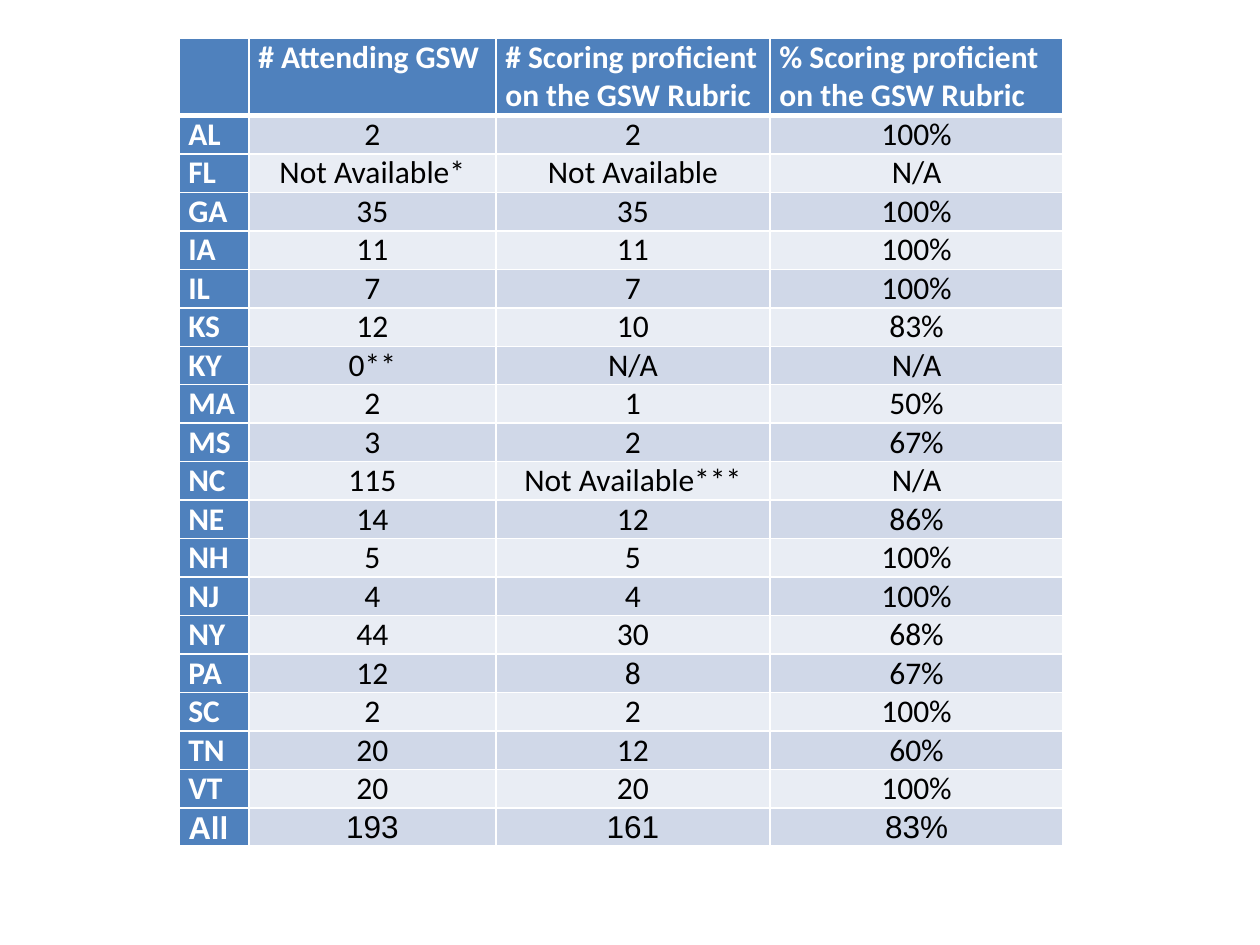
from dataclasses import dataclass

from lxml.etree import SubElement
from pptx import Presentation
from pptx.dml.color import RGBColor
from pptx.enum.text import MSO_ANCHOR, PP_ALIGN
from pptx.oxml.ns import qn
from pptx.table import _Cell
from pptx.util import Pt

COLORS = {
    "accent": "4F81BD",
    "band_dark": "D0D8E8",
    "band_light": "E9EDF4",
    "white": "FFFFFF",
    "black": "000000",
}
COLUMN_WIDTHS = (40, 141.2, 156.6, 167.6)
ROW_HEIGHT = 21.6
HEADINGS = (
    "",
    "# Attending GSW",
    "# Scoring proficient on the GSW Rubric",
    "% Scoring proficient on the GSW Rubric",
)


@dataclass(frozen=True)
class StateResult:
    state: str
    attending: str
    proficient: str
    percent: str
    font: str = "Calibri"


@dataclass(frozen=True)
class CellStyle:
    fill: str
    color: str
    bold: bool
    anchor: MSO_ANCHOR
    align: PP_ALIGN


HEADING = CellStyle("accent", "white", True, MSO_ANCHOR.TOP, PP_ALIGN.LEFT)
STATE = CellStyle("accent", "white", True, MSO_ANCHOR.BOTTOM, PP_ALIGN.LEFT)
BANDS = tuple(
    CellStyle(fill, "black", False, MSO_ANCHOR.MIDDLE, PP_ALIGN.CENTER)
    for fill in ("band_dark", "band_light")
)

RESULTS = (
    StateResult("AL", "2", "2", "100%"),
    StateResult("FL", "Not Available*", "Not Available", "N/A"),
    StateResult("GA", "35", "35", "100%"),
    StateResult("IA", "11", "11", "100%"),
    StateResult("IL", "7", "7", "100%"),
    StateResult("KS", "12", "10", "83%"),
    StateResult("KY", "0**", "N/A", "N/A"),
    StateResult("MA", "2", "1", "50%"),
    StateResult("MS", "3", "2", "67%"),
    StateResult("NC", "115", "Not Available***", "N/A"),
    StateResult("NE", "14", "12", "86%"),
    StateResult("NH", "5", "5", "100%"),
    StateResult("NJ", "4", "4", "100%"),
    StateResult("NY", "44", "30", "68%"),
    StateResult("PA", "12", "8", "67%"),
    StateResult("SC", "2", "2", "100%"),
    StateResult("TN", "20", "12", "60%"),
    StateResult("VT", "20", "20", "100%"),
    StateResult("All", "193", "161", "83%", "Arial"),
)


def add_borders(cell: _Cell, top: float, bottom: float) -> None:
    properties = cell._tc.get_or_add_tcPr()
    for side, width in (("L", 1), ("R", 1), ("T", top), ("B", bottom)):
        border = SubElement(properties, qn(f"a:ln{side}"), w=str(Pt(width)))
        fill = SubElement(border, qn("a:solidFill"))
        SubElement(fill, qn("a:srgbClr"), val=COLORS["white"])


def fill_cell(cell: _Cell, text: str, style: CellStyle, font: str) -> None:
    cell.fill.solid()
    cell.fill.fore_color.rgb = RGBColor.from_string(COLORS[style.fill])
    cell.margin_left = cell.margin_right = Pt(5.4)
    cell.margin_top = cell.margin_bottom = Pt(0)
    cell.vertical_anchor = style.anchor
    paragraph = cell.text_frame.paragraphs[0]
    paragraph.alignment = style.align
    if text:
        run = paragraph.add_run()
        run.text = text
        run.font.name = font
        run.font.size = Pt(18)
        run.font.bold = style.bold
        run.font.color.rgb = RGBColor.from_string(COLORS[style.color])


def main() -> None:
    """Build the slide of GSW rubric results by state."""
    deck = Presentation()
    deck.slide_width, deck.slide_height = Pt(720), Pt(540)
    slide = deck.slides.add_slide(deck.slide_layouts[6])
    row_count = len(RESULTS) + 1
    scores = slide.shapes.add_table(
        row_count, len(COLUMN_WIDTHS), Pt(102.2), Pt(21.9),
        Pt(sum(COLUMN_WIDTHS)), Pt(ROW_HEIGHT * (row_count + 1)),
    ).table
    scores.first_row = scores.horz_banding = False
    for column, width in zip(scores.columns, COLUMN_WIDTHS):
        column.width = Pt(width)
    for index, row in enumerate(scores.rows):
        row.height = Pt(ROW_HEIGHT * (2 if index == 0 else 1))

    for column, heading in enumerate(HEADINGS):
        cell = scores.cell(0, column)
        add_borders(cell, 1, 3)
        fill_cell(cell, heading, HEADING, "Calibri")
    for index, result in enumerate(RESULTS):
        values = (result.state, result.attending, result.proficient, result.percent)
        for column, value in enumerate(values):
            cell = scores.cell(index + 1, column)
            add_borders(cell, 3 if index == 0 else 1, 1)
            style = STATE if column == 0 else BANDS[index % 2]
            fill_cell(cell, value, style, result.font)
    deck.save("out.pptx")


if __name__ == "__main__":
    main()
